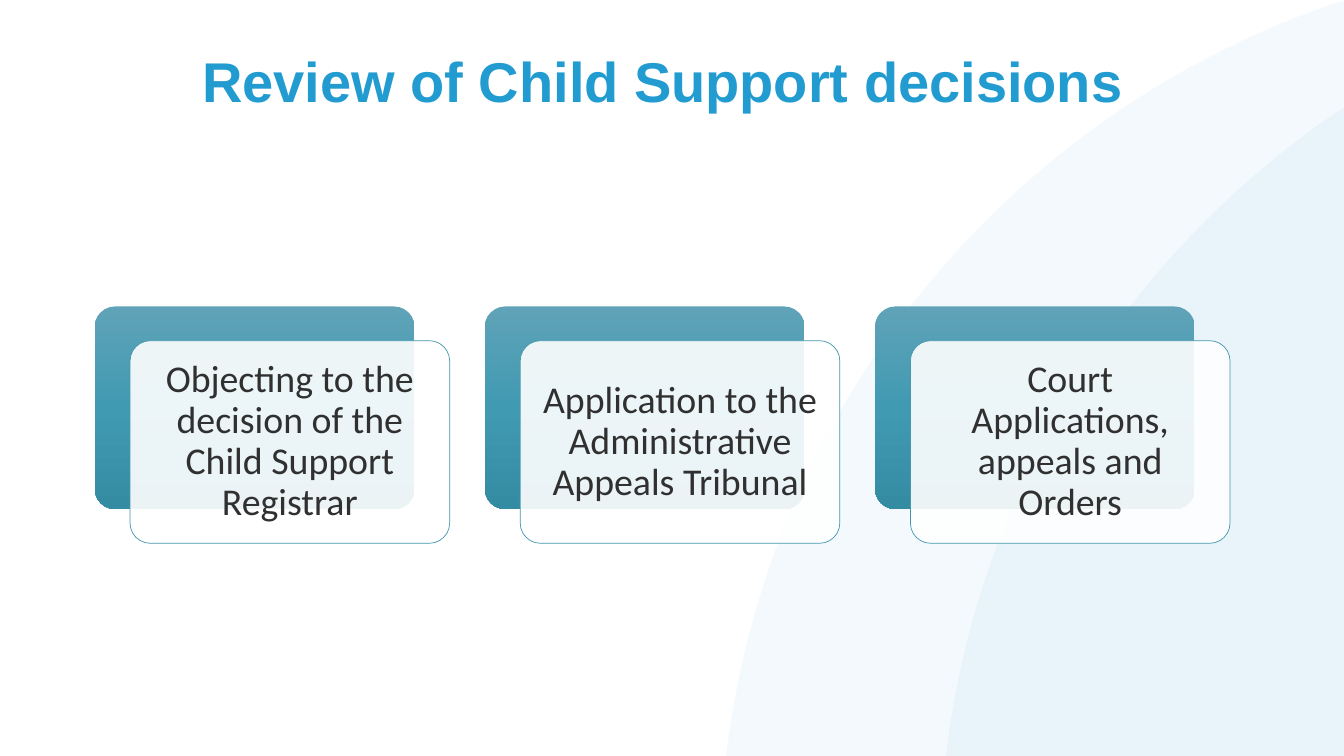
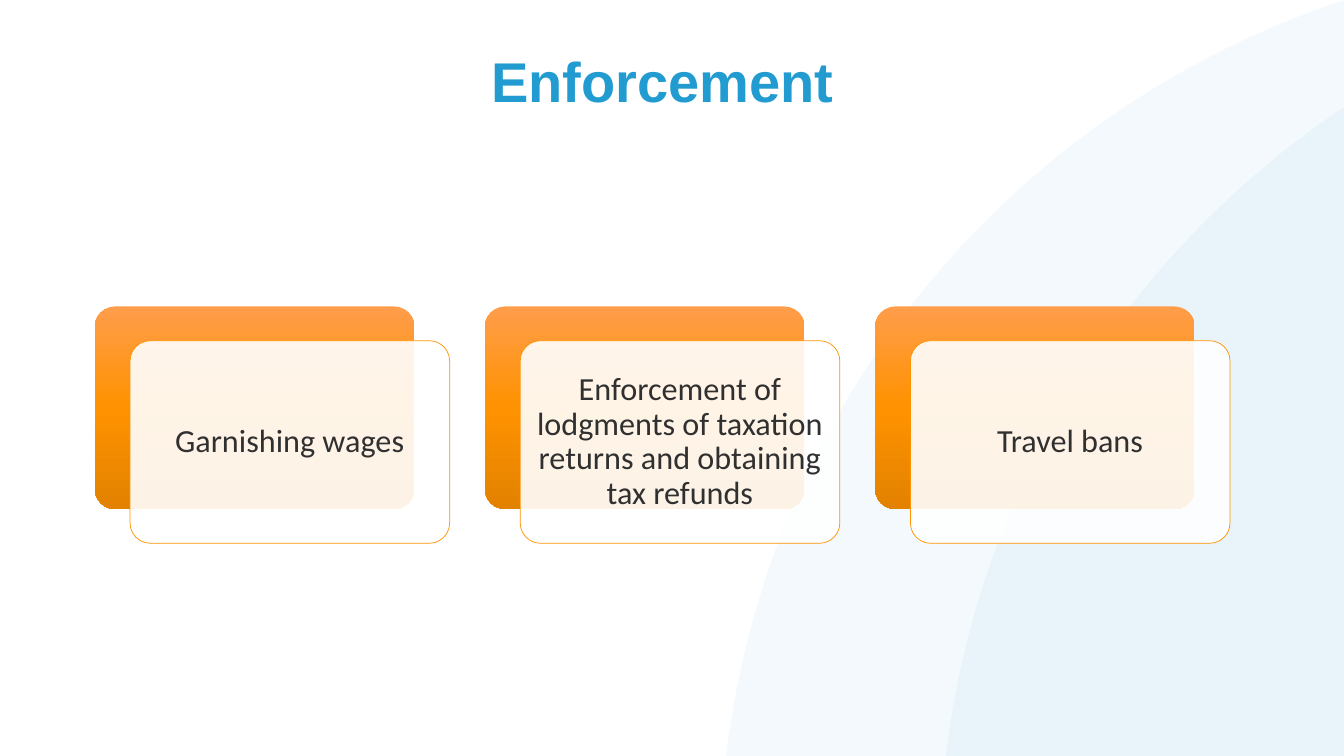
import copy
import dataclasses

import pptx
import pptx.dml.color
import pptx.enum.shapes
import pptx.enum.text
import pptx.oxml.ns
import pptx.util
from pptx.util import Inches

SLIDES = [
    {
        "title": "Review of Child Support decisions",
        "palette": "teal",
        "size": 27,
        "inset": 0.11,
        "cards": [
            "Objecting to the decision of the Child Support Registrar",
            "Application to the Administrative Appeals Tribunal",
            "Court Applications, appeals and Orders",
        ],
    },
    {
        "title": "Enforcement",
        "palette": "orange",
        "size": 23,
        "inset": 0.1,
        "cards": [
            "Garnishing wages",
            "Enforcement of lodgments of taxation returns and obtaining tax refunds",
            "Travel bans",
        ],
    },
]


@dataclasses.dataclass(frozen=True)
class Theme:
    accent: str = "229CD0"
    ink: str = "303030"
    paper: str = "FFFFFF"
    title_font: str = "Arial"
    body_font: str = "Calibri"
    title_size: int = 40
    line_spacing: float = 0.9
    outline_width: float = 0.5
    arc_opacity: int = 5
    card_opacity: int = 90
    corner: float = 0.1


THEME = Theme()
PALETTES = {
    "teal": {"gradient": ["60A3B8", "409AB2", "348CA3"], "outline": "4597AD"},
    "orange": {"gradient": ["FF9D4B", "FF9200", "E38200"], "outline": "FF9200"},
}
SHAPE = pptx.enum.shapes.MSO_SHAPE
ANCHOR = pptx.enum.text.MSO_ANCHOR

MARGIN, CONTENT_WIDTH = 0.94, 11.26
ARC_LEFTS, ARC_TOP, ARC_SIZE = (7.14, 9.32), -0.45, 18.02
CARD_TOP, CARD_WIDTH, CARD_HEIGHT = 3.04, 3.17, 2.01
CARD_STEP, OFFSET_X, OFFSET_Y = 3.87, 0.35, 0.34


def rgb(value):
    return pptx.dml.color.RGBColor.from_string(value)


def add_shape(page, kind, left, top, width, height):
    shape = page.shapes.add_shape(
        kind, Inches(left), Inches(top), Inches(width), Inches(height)
    )
    shape.shadow.inherit = False
    shape.line.fill.background()
    return shape


def fill_translucent(shape, color, opacity):
    shape.fill.solid()
    shape.fill.fore_color.rgb = rgb(color)
    tint = shape.element.find(".//" + pptx.oxml.ns.qn("a:srgbClr"))
    alpha = pptx.oxml.xmlchemy.OxmlElement("a:alpha")
    alpha.set("val", str(opacity * 1000))
    tint.append(alpha)


def fill_gradient(shape, colors):
    shape.fill.gradient()
    shape.fill.gradient_angle = 270
    stop_list = shape.element.find(".//" + pptx.oxml.ns.qn("a:gsLst"))
    while len(stop_list) < len(colors):
        stop_list.append(copy.deepcopy(stop_list[0]))
    for index, (stop, color) in enumerate(zip(shape.fill.gradient_stops, colors)):
        stop.position = index / (len(colors) - 1)
        stop.color.rgb = rgb(color)


def write_text(shape, text, font, size, color, anchor, bold=False):
    frame = shape.text_frame
    frame.word_wrap = True
    frame.vertical_anchor = anchor
    para = frame.paragraphs[0]
    para.text = text
    para.alignment = pptx.enum.text.PP_ALIGN.CENTER
    para.line_spacing = THEME.line_spacing
    para.font.name = font
    para.font.size = pptx.util.Pt(size)
    para.font.bold = bold
    para.font.color.rgb = rgb(color)
    return frame


def add_arcs_to_layout(page):
    for left in ARC_LEFTS:
        arc = add_shape(page, SHAPE.OVAL, left, ARC_TOP, ARC_SIZE, ARC_SIZE)
        fill_translucent(arc, THEME.accent, THEME.arc_opacity)
        page.slide_layout.shapes.element.append(arc.element)


def add_title(page, text):
    box = page.shapes.add_textbox(
        Inches(MARGIN), Inches(0.49), Inches(CONTENT_WIDTH), Inches(0.97)
    )
    write_text(box, text, THEME.title_font, THEME.title_size, THEME.accent,
               ANCHOR.TOP, bold=True)


def add_card(page, left, text, content):
    palette = PALETTES[content["palette"]]
    back = add_shape(page, SHAPE.ROUNDED_RECTANGLE, left, CARD_TOP,
                     CARD_WIDTH, CARD_HEIGHT)
    fill_gradient(back, palette["gradient"])
    front = add_shape(page, SHAPE.ROUNDED_RECTANGLE, left + OFFSET_X,
                      CARD_TOP + OFFSET_Y, CARD_WIDTH, CARD_HEIGHT)
    fill_translucent(front, THEME.paper, THEME.card_opacity)
    front.line.color.rgb = rgb(palette["outline"])
    front.line.width = pptx.util.Pt(THEME.outline_width)
    for shape in (back, front):
        shape.adjustments[0] = THEME.corner
    frame = write_text(front, text, THEME.body_font, content["size"], THEME.ink,
                       ANCHOR.MIDDLE)
    inset = Inches(content["inset"])
    frame.margin_left = frame.margin_right = inset
    frame.margin_top = frame.margin_bottom = inset


def main():
    deck = pptx.Presentation()
    deck.slide_width, deck.slide_height = Inches(13.33), Inches(7.5)
    blank = deck.slide_layouts[6]
    for number, content in enumerate(SLIDES):
        page = deck.slides.add_slide(blank)
        if number == 0:
            add_arcs_to_layout(page)
        add_title(page, content["title"])
        for column, text in enumerate(content["cards"]):
            add_card(page, MARGIN + column * CARD_STEP, text, content)
    deck.save("out.pptx")


if __name__ == "__main__":
    main()
